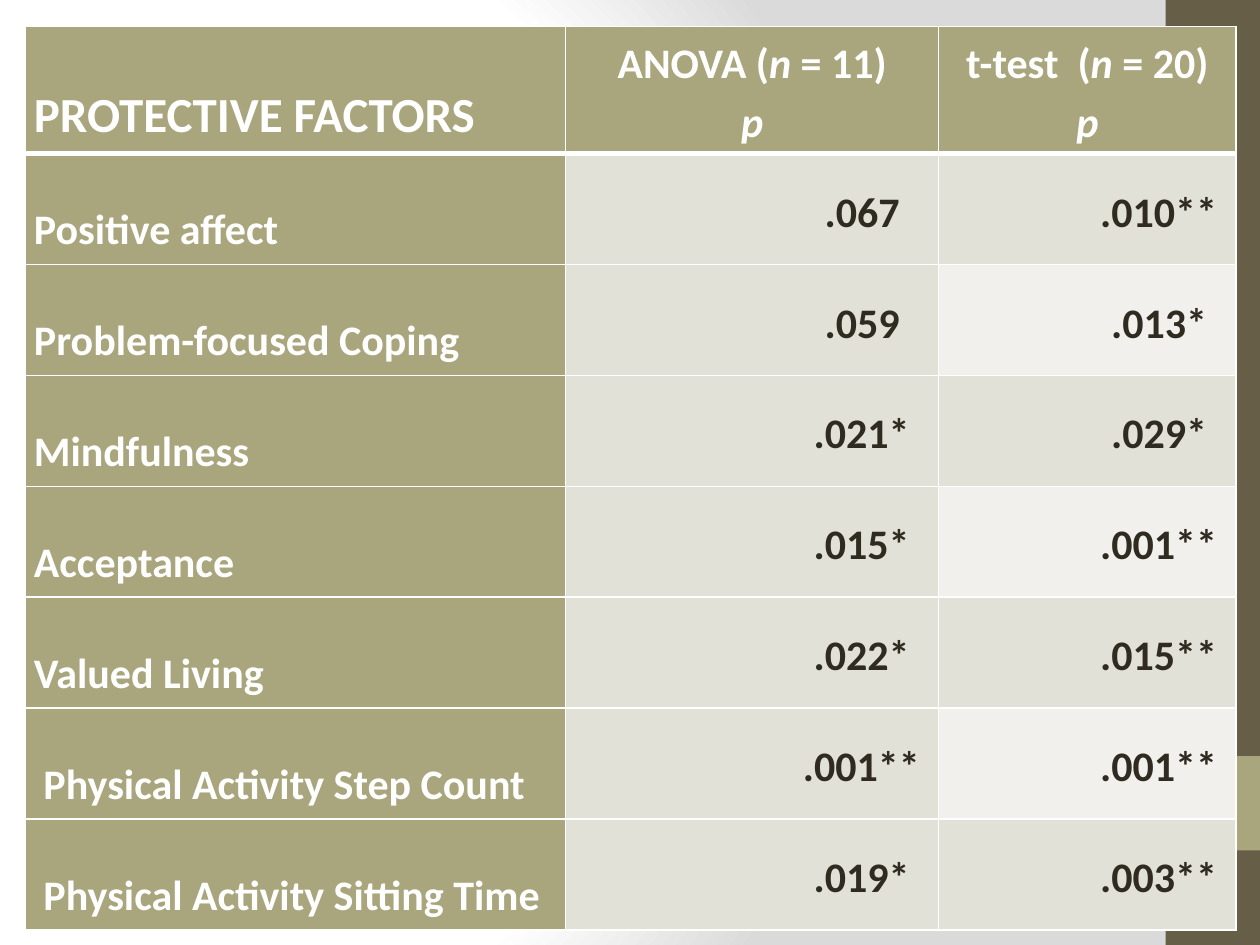
from pptx import Presentation
from pptx.dml.color import RGBColor
from pptx.enum.shapes import MSO_SHAPE
from pptx.enum.text import MSO_ANCHOR, PP_ALIGN
from pptx.oxml import parse_xml
from pptx.oxml.ns import nsdecls
from pptx.util import Inches, Pt

RECTANGLE = MSO_SHAPE.RECTANGLE
TOP, MIDDLE = MSO_ANCHOR.TOP, MSO_ANCHOR.MIDDLE
LEFT, CENTER, RIGHT = PP_ALIGN.LEFT, PP_ALIGN.CENTER, PP_ALIGN.RIGHT

WHITE = RGBColor(0xFF, 0xFF, 0xFF)
GREY = RGBColor(0xDA, 0xDA, 0xDA)
BROWN = RGBColor(0x67, 0x5E, 0x47)
OLIVE = RGBColor(0xA9, 0xA5, 0x7C)
BAND_DARK = RGBColor(0xE2, 0xE1, 0xD7)
BAND_LIGHT = RGBColor(0xF1, 0xF0, 0xEC)
INK = RGBColor(0x2F, 0x2B, 0x20)

COLUMN_WIDTHS = [4.29, 2.96, 2.36]
HEADER_HEIGHT, ROW_HEIGHT = 1.01, 0.88
SIDE_INSET, STAR_SPACE = 0.07, 0.08

TEST_HEADERS = [
    [[("ANOVA (", False), ("n", True), (" = 11)", False)], [("p", True)]],
    [[("t-test  (", False), ("n ", True), ("= 20)", False)], [("p", True)]],
]
FACTORS = [
    ("Positive affect", ".067", ".010**"),
    ("Problem-focused Coping", ".059", ".013*"),
    ("Mindfulness", ".021*", ".029*"),
    ("Acceptance", ".015*", ".001**"),
    ("Valued Living", ".022*", ".015**"),
    (" Physical Activity Step Count", ".001**", ".001**"),
    (" Physical Activity Sitting Time", ".019*", ".003**"),
]


def set_format(target, values):
    for name, value in values.items():
        setattr(target, name, value)


def set_background(slide):
    stops = "".join(
        f'<a:gs pos="{position * 1000}"><a:srgbClr val="{color}"/></a:gs>'
        for position, color in [(0, WHITE), (75, WHITE), (100, GREY)]
    )
    slide.element.cSld.insert(0, parse_xml(
        f'<p:bg {nsdecls("p", "a")}><p:bgPr><a:gradFill rotWithShape="1">'
        f'<a:gsLst>{stops}</a:gsLst><a:path path="circle">'
        '<a:fillToRect l="20000" t="50000" r="100000" b="50000"/></a:path>'
        '</a:gradFill><a:effectLst/></p:bgPr></p:bg>'
    ))


def add_side_block(slide, top, height, color):
    block = slide.shapes.add_shape(
        RECTANGLE, Inches(9.25), Inches(top), Inches(0.75), Inches(height))
    block.shadow.inherit = False
    block.fill.solid()
    block.fill.fore_color.rgb = color
    block.line.fill.background()


def set_borders(cell, bottom_width):
    widths = {"lnL": 1, "lnR": 1, "lnT": 1, "lnB": bottom_width}
    properties = cell._tc.get_or_add_tcPr()
    for index, (side, width) in enumerate(widths.items()):
        properties.insert(index, parse_xml(
            f'<a:{side} {nsdecls("a")} w="{Pt(width)}"><a:solidFill>'
            f'<a:srgbClr val="{WHITE}"/></a:solidFill></a:{side}>'
        ))


def fill_cell(cell, lines, fill, color, anchor, layout, size=24,
              right_pad=0, bottom_border=1):
    set_format(cell, {
        "margin_left": Inches(SIDE_INSET),
        "margin_right": Inches(SIDE_INSET + right_pad),
        "margin_top": 0,
        "margin_bottom": 0,
        "vertical_anchor": anchor,
    })
    cell.fill.solid()
    cell.fill.fore_color.rgb = fill
    set_borders(cell, bottom_border)
    frame = cell.text_frame
    for index, line in enumerate(lines):
        paragraph = frame.add_paragraph() if index else frame.paragraphs[0]
        set_format(paragraph, layout)
        for text, italic in line:
            run = paragraph.add_run()
            run.text = text
            set_format(run.font, {"name": "Calibri", "size": Pt(size),
                                  "bold": True, "italic": italic})
            run.font.color.rgb = color
    frame.paragraphs[0].space_before = Pt(6 if len(lines) > 1 else 0)
    frame.paragraphs[-1].space_after = Pt(6 if len(lines) > 1 else 0)


def fill_label(cell, text, **options):
    layout = {"alignment": LEFT, "line_spacing": 2.0}
    fill_cell(cell, [[(text, False)]], OLIVE, WHITE, TOP, layout, **options)


def fill_value(cell, text, fill):
    layout = {"alignment": RIGHT, "line_spacing": 1.15}
    right_pad = (3 - text.count("*")) * STAR_SPACE
    fill_cell(cell, [[(text, False)]], fill, INK, MIDDLE, layout,
              right_pad=right_pad)


def add_factor_table(slide):
    height = HEADER_HEIGHT + ROW_HEIGHT * len(FACTORS)
    table = slide.shapes.add_table(
        len(FACTORS) + 1, len(COLUMN_WIDTHS), Inches(0.2), Inches(0.21),
        Inches(sum(COLUMN_WIDTHS)), Inches(height)).table
    set_format(table, {"first_row": False, "horz_banding": False})
    for column, width in zip(table.columns, COLUMN_WIDTHS):
        column.width = Inches(width)
    for index, row in enumerate(table.rows):
        row.height = Inches(ROW_HEIGHT if index else HEADER_HEIGHT)

    fill_label(table.cell(0, 0), "PROTECTIVE FACTORS", size=28, bottom_border=3)
    header_layout = {"alignment": CENTER, "line_spacing": 1.15}
    for column, lines in enumerate(TEST_HEADERS, 1):
        fill_cell(table.cell(0, column), lines, OLIVE, WHITE, MIDDLE,
                  header_layout, bottom_border=3)
    for row, (factor, anova, t_test) in enumerate(FACTORS, 1):
        fill_label(table.cell(row, 0), factor)
        fill_value(table.cell(row, 1), anova, BAND_DARK)
        fill_value(table.cell(row, 2), t_test,
                   BAND_DARK if row % 2 else BAND_LIGHT)


def main():
    presentation = Presentation()
    set_format(presentation, {"slide_width": Inches(10),
                              "slide_height": Inches(7.5)})
    slide = presentation.slides.add_slide(presentation.slide_layouts[6])
    set_background(slide)
    add_side_block(slide, 0, 7.5, BROWN)
    add_side_block(slide, 6, 0.75, OLIVE)
    add_factor_table(slide)
    presentation.save("out.pptx")


if __name__ == "__main__":
    main()
